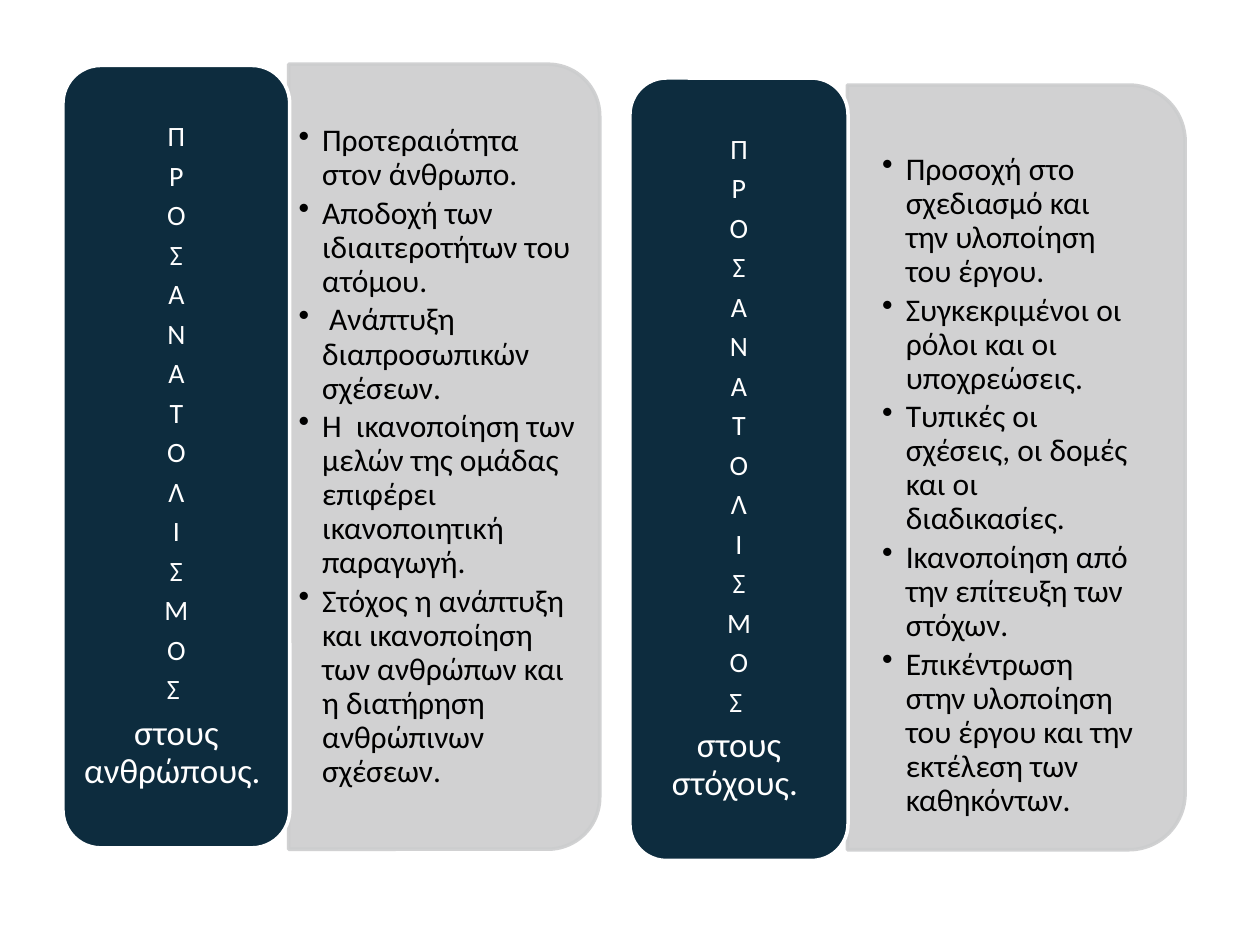
from lxml import etree
from pptx import Presentation
from pptx.dml.color import RGBColor
from pptx.enum.shapes import MSO_SHAPE as SHAPE
from pptx.enum.text import MSO_ANCHOR as ANCHOR, PP_ALIGN as ALIGN
from pptx.oxml.ns import qn
from pptx.util import Pt

COLORS = {"bar": "0D2C3E", "panel": "CCCDCE", "white": "FFFFFF", "black": "000000"}
FONT = "Calibri"
INDENT = 13.5
LETTERS = list("ΠΡΟΣΑΝΑΤΟΛΙΣΜΟ") + ["Σ "]

# Boxes are left, top, width, height in points
COLUMNS = [
    {
        "bar": (36, 37.4, 129.6, 447.1),
        "panel": (164.9, 36.7, 177.8, 448.6),
        "body": (165.6, 45.4, 169.2, 431.3),
        "insets": (5, 3, 5, 3),
        "target": "στους ανθρώπους. ",
        "bullets": [
            "Προτεραιότητα στον άνθρωπο.",
            "Αποδοχή των ιδιαιτεροτήτων του ατόμου.",
            " Ανάπτυξη διαπροσωπικών  σχέσεων.",
            "Η  ικανοποίηση των μελών της ομάδας  επιφέρει ικανοποιητική παραγωγή.",
            "Στόχος η ανάπτυξη και ικανοποίηση των ανθρώπων και η διατήρηση "
            "ανθρώπινων σχέσεων.",
        ],
    },
    {
        "bar": (360, 44.6, 124.6, 447.1),
        "panel": (484.2, 48.6, 193, 437),
        "body": (484.6, 58.3, 183.6, 418.3),
        "insets": (19.5, 30, 19.5, 10),
        "target": "στους στόχους. ",
        "bullets": [
            "Προσοχή στο σχεδιασμό και την υλοποίηση του έργου.",
            "Συγκεκριμένοι οι ρόλοι και οι υποχρεώσεις.",
            "Τυπικές οι σχέσεις, οι δομές και οι διαδικασίες.",
            "Ικανοποίηση από την επίτευξη των στόχων.",
            "Επικέντρωση στην υλοποίηση του έργου και την εκτέλεση των καθηκόντων.",
        ],
    },
]


def add_block(kind, box, fill, line):
    sp = slide.shapes.add_shape(kind, *map(Pt, box))
    sp.shadow.inherit = False
    sp.fill.solid()
    sp.fill.fore_color.rgb = RGBColor.from_string(COLORS[fill])
    sp.line.color.rgb = RGBColor.from_string(COLORS[line])
    sp.line.width = Pt(2)
    return sp


def write_paragraphs(sp, insets, items, color, gap, align, bullet=False):
    """Fill a shape with (text, size) paragraphs, centred vertically."""
    tf = sp.text_frame
    tf.word_wrap = True
    tf.vertical_anchor = ANCHOR.MIDDLE
    tf.margin_left, tf.margin_top, tf.margin_right, tf.margin_bottom = map(Pt, insets)
    tf.text = "\n".join(text for text, size in items)
    for p, (text, size) in zip(tf.paragraphs, items):
        p.alignment = align
        p.line_spacing = 0.9
        p.space_after = Pt(gap)
        if bullet:
            p.level = 1
            pPr = p._p.get_or_add_pPr()
            pPr.set("marL", str(Pt(INDENT)))
            pPr.set("indent", str(-Pt(INDENT)))
            etree.SubElement(pPr, qn("a:buChar"), char="•")
        font = p.runs[0].font
        font.name = FONT
        font.size = Pt(size)
        font.color.rgb = RGBColor.from_string(COLORS[color])


prs = Presentation()
prs.slide_width, prs.slide_height = Pt(720), Pt(540)
slide = prs.slides.add_slide(prs.slide_layouts[6])

for column in COLUMNS:
    # The panel is turned a quarter so that its rounded corners face right
    left, top, width, height = column["panel"]
    shift = (height - width) / 2
    panel = add_block(SHAPE.ROUND_2_SAME_RECTANGLE,
                      (left - shift, top + shift, height, width), "panel", "panel")
    panel.rotation = 90
    for color in panel._element.spPr.iter(qn("a:srgbClr")):
        etree.SubElement(color, qn("a:alpha"), val="90000")

    body = slide.shapes.add_textbox(*map(Pt, column["body"]))
    write_paragraphs(body, column["insets"], [(text, 18) for text in column["bullets"]],
                     "black", 2.6, ALIGN.LEFT, bullet=True)

    bar = add_block(SHAPE.ROUNDED_RECTANGLE, column["bar"], "bar", "white")
    title = [(letter, 16) for letter in LETTERS] + [(column["target"], 20)]
    write_paragraphs(bar, (5, 2.5, 5, 2.5), title, "white", 5.3, ALIGN.CENTER)

prs.save("out.pptx")
